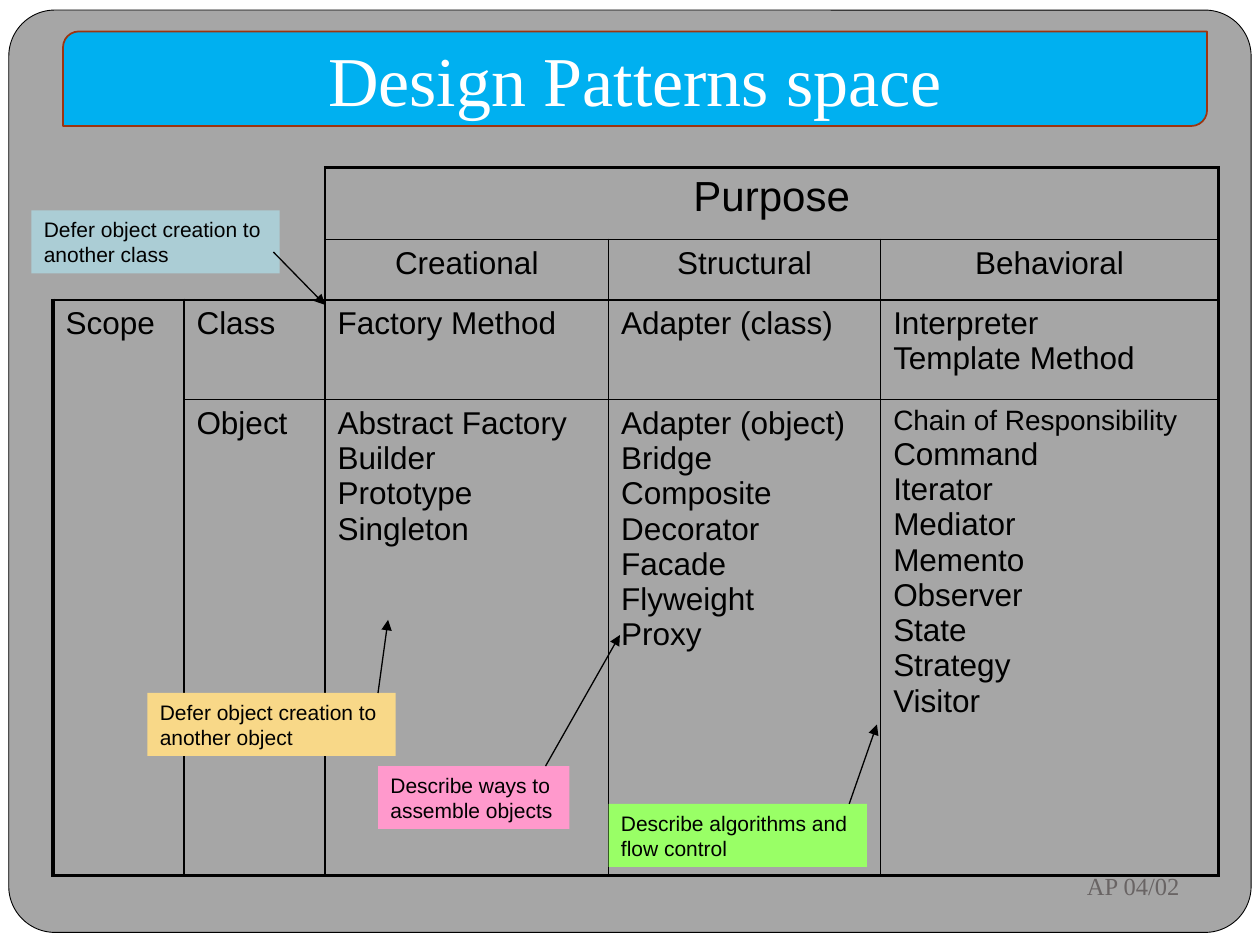
"""Build the Design Patterns space slide."""
import pptx
import pptx.chart
import pptx.dml.color
import pptx.enum.shapes
import pptx.enum.text
import pptx.oxml
import pptx.oxml.ns
import pptx.util

Inches = pptx.util.Inches
Pt = pptx.util.Pt
SHAPE = pptx.enum.shapes.MSO_SHAPE
ALIGN = pptx.enum.text.PP_ALIGN
ANCHOR = pptx.enum.text.MSO_ANCHOR
COLORS = {
    "white": "FFFFFF", "black": "000000", "panel": "A6A6A6", "footer": "696464",
    "title": "00B0F0", "title_line": "9C3511", "class": "ABCDD5",
    "object": "F8D888", "algorithms": "99FF66", "assembly": "FF99CC",
}


def rgb(name):
    return pptx.dml.color.RGBColor.from_string(COLORS[name])


def write(frame, paragraphs, size, color="black", font="Arial", align=ALIGN.LEFT):
    for index, text in enumerate(paragraphs):
        paragraph = frame.paragraphs[0] if index == 0 else frame.add_paragraph()
        paragraph.alignment = align
        for number, line in enumerate(text.split("\n")):
            if number:
                paragraph.add_line_break()
            run = paragraph.add_run()
            run.text = line
            run.font.size = Pt(size)
            run.font.name = font
            run.font.color.rgb = rgb(color)


deck = pptx.Presentation()
deck.slide_width, deck.slide_height = Inches(10), Inches(7.5)
slide = deck.slides.add_slide(deck.slide_layouts[6])
slide.background.fill.solid()
slide.background.fill.fore_color.rgb = rgb("white")
shapes = slide.shapes

panel = shapes.add_shape(
    SHAPE.ROUNDED_RECTANGLE, Inches(0.07), Inches(0.08), Inches(9.86), Inches(7.32))
panel.adjustments[0] = 0.05
panel.shadow.inherit = False
panel.fill.solid()
panel.fill.fore_color.rgb = rgb("panel")
panel.line.color.rgb = rgb("black")
panel.line.width = Pt(0.5)

footer = shapes.add_textbox(Inches(6.75), Inches(6.77), Inches(2.71), Inches(0.52))
footer.text_frame.word_wrap = True
footer.text_frame.vertical_anchor = ANCHOR.MIDDLE
write(footer.text_frame, ["AP 04/02"], 14, "footer", "Times New Roman", ALIGN.RIGHT)

column_widths = [1.04, 1.12, 2.25, 2.16, 2.68]
row_heights = [0.57, 0.48, 0.79, 3.78]
patterns = shapes.add_table(
    4, 5, Inches(0.42), Inches(1.33),
    Inches(sum(column_widths)), Inches(sum(row_heights))).table
patterns.first_row = patterns.horz_banding = False
for column, width in zip(patterns.columns, column_widths):
    column.width = Inches(width)
for row, height in zip(patterns.rows, row_heights):
    row.height = Inches(height)

regions = [
    (0, 0, 1, 1, []),
    (0, 2, 0, 4, ["Purpose"]),
    (1, 2, 1, 2, ["Creational"]),
    (1, 3, 1, 3, ["Structural"]),
    (1, 4, 1, 4, ["Behavioral"]),
    (2, 0, 3, 0, ["Scope"]),
    (2, 1, 2, 1, ["Class"]),
    (2, 2, 2, 2, ["Factory Method"]),
    (2, 3, 2, 3, ["Adapter (class)"]),
    (2, 4, 2, 4, ["Interpreter\nTemplate Method"]),
    (3, 1, 3, 1, ["Object"]),
    (3, 2, 3, 2, ["Abstract Factory", "Builder", "Prototype", "Singleton"]),
    (3, 3, 3, 3, ["Adapter (object)", "Bridge", "Composite", "Decorator", "Facade",
                  "Flyweight", "Proxy"]),
    (3, 4, 3, 4, ["Chain of Responsibility", "Command", "Iterator", "Mediator",
                  "Memento", "Observer", "State", "Strategy", "Visitor"]),
]
for top, left, bottom, right, names in regions:
    origin = patterns.cell(top, left)
    if (top, left) != (bottom, right):
        origin.merge(patterns.cell(bottom, right))
    write(origin.text_frame, names, 24 if top == 0 else 18,
          align=ALIGN.CENTER if top < 2 else ALIGN.LEFT)
    if names and names[0] == "Chain of Responsibility":
        origin.text_frame.paragraphs[0].runs[0].font.size = Pt(16)
    corner = top < 2 and left < 2
    borders = {
        "lnL": 0 if corner else 2.25 if left == 0 else 1.5 if top < 2 and left == 2 else 1,
        "lnR": 2.25 if right == 4 else 1.5 if corner else 1,
        "lnT": 0 if corner else 1.5 if top == 0 or top == 2 and left < 2 else 1,
        "lnB": 2.25 if bottom == 3 else 1.5 if corner else 1,
    }
    for row in range(top, bottom + 1):
        for column in range(left, right + 1):
            cell = patterns.cell(row, column)
            properties = cell._tc.get_or_add_tcPr()
            for edge, points in borders.items():
                paint = (f'<a:solidFill><a:srgbClr val="{COLORS["black"]}"/></a:solidFill>'
                         if points else "<a:noFill/>")
                properties.append(pptx.oxml.parse_xml(
                    f'<a:{edge} {pptx.oxml.ns.nsdecls("a")} w="{Pt(points)}">'
                    f"{paint}</a:{edge}>"))
            cell.fill.background()

callouts = [
    ("class", "Defer object creation to \nanother class",
     (0.25, 1.67, 1.97), (2.17, 2, 2.58, 2.42)),
    ("object", "Defer object creation to \nanother object",
     (1.17, 5.5, 1.97), (3, 5.5, 3.08, 4.92)),
    ("algorithms", "Describe algorithms and \nflow control",
     (4.83, 6.38, 2.05), (6.74, 6.38, 6.96, 5.75)),
    ("assembly", "Describe ways to \nassemble objects",
     (3, 6.08, 1.52), (4.33, 6.08, 4.92, 5.04)),
]
for color, text, (left, top, width), ends in callouts:
    note = shapes.add_textbox(Inches(left), Inches(top), Inches(width), Inches(0.5))
    note.fill.solid()
    note.fill.fore_color.rgb = rgb(color)
    note.text_frame.word_wrap = False
    note.text_frame.auto_size = pptx.enum.text.MSO_AUTO_SIZE.SHAPE_TO_FIT_TEXT
    write(note.text_frame, [text], 12)
    arrow = shapes.add_connector(
        pptx.enum.shapes.MSO_CONNECTOR.STRAIGHT, *[Inches(value) for value in ends])
    arrow.line.color.rgb = rgb("black")
    arrow.line.width = Pt(0.75)
    arrow.line._get_or_add_ln().append(pptx.oxml.parse_xml(
        f'<a:tailEnd {pptx.oxml.ns.nsdecls("a")} type="triangle"/>'))
    arrow._element.spPr.append(pptx.oxml.parse_xml(
        f'<a:effectLst {pptx.oxml.ns.nsdecls("a")}/>'))

title = shapes.add_shape(
    SHAPE.ROUND_2_DIAG_RECTANGLE, Inches(0.5), Inches(0.25), Inches(9.08), Inches(0.75))
title.shadow.inherit = False
title.fill.solid()
title.fill.fore_color.rgb = rgb("title")
title.line.color.rgb = rgb("title_line")
title.line.width = Pt(1)
title.text_frame.vertical_anchor = ANCHOR.MIDDLE
write(title.text_frame, ["Design Patterns space"], 40, "white", "Times New Roman",
      ALIGN.CENTER)

deck.save("out.pptx")
